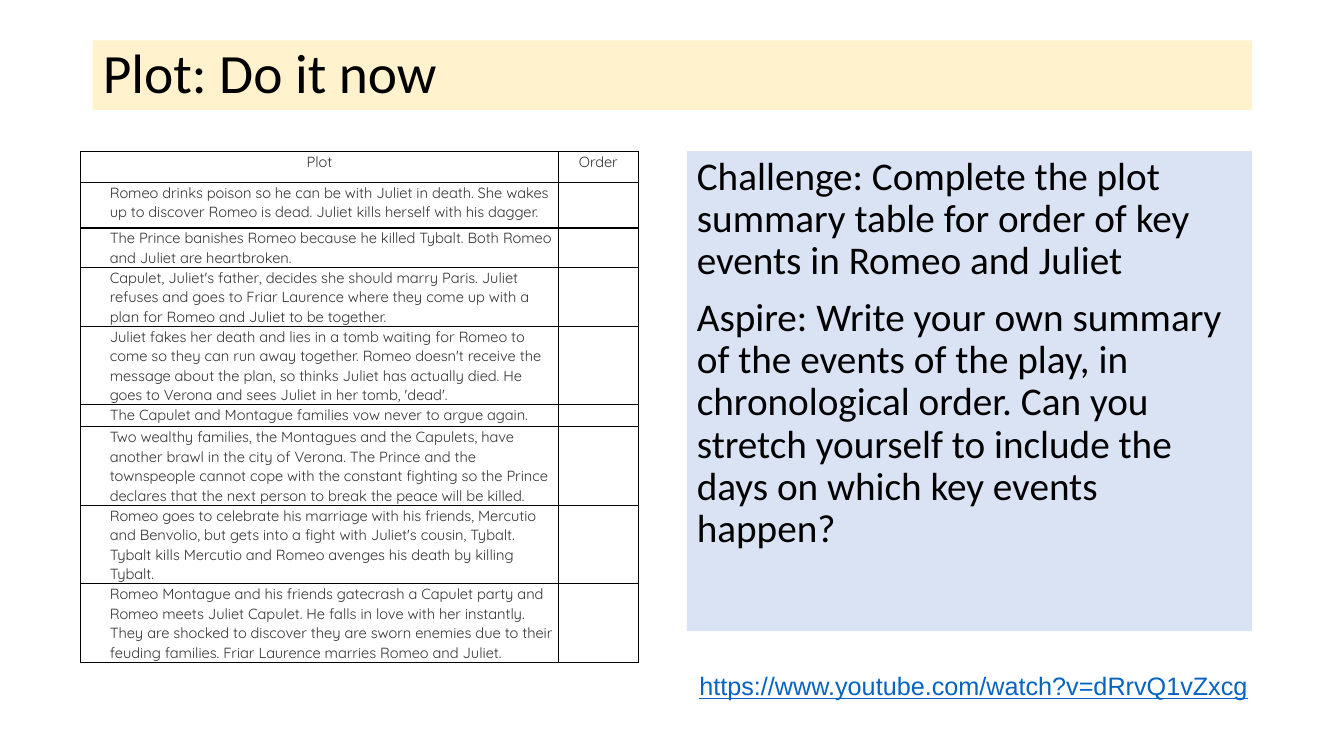
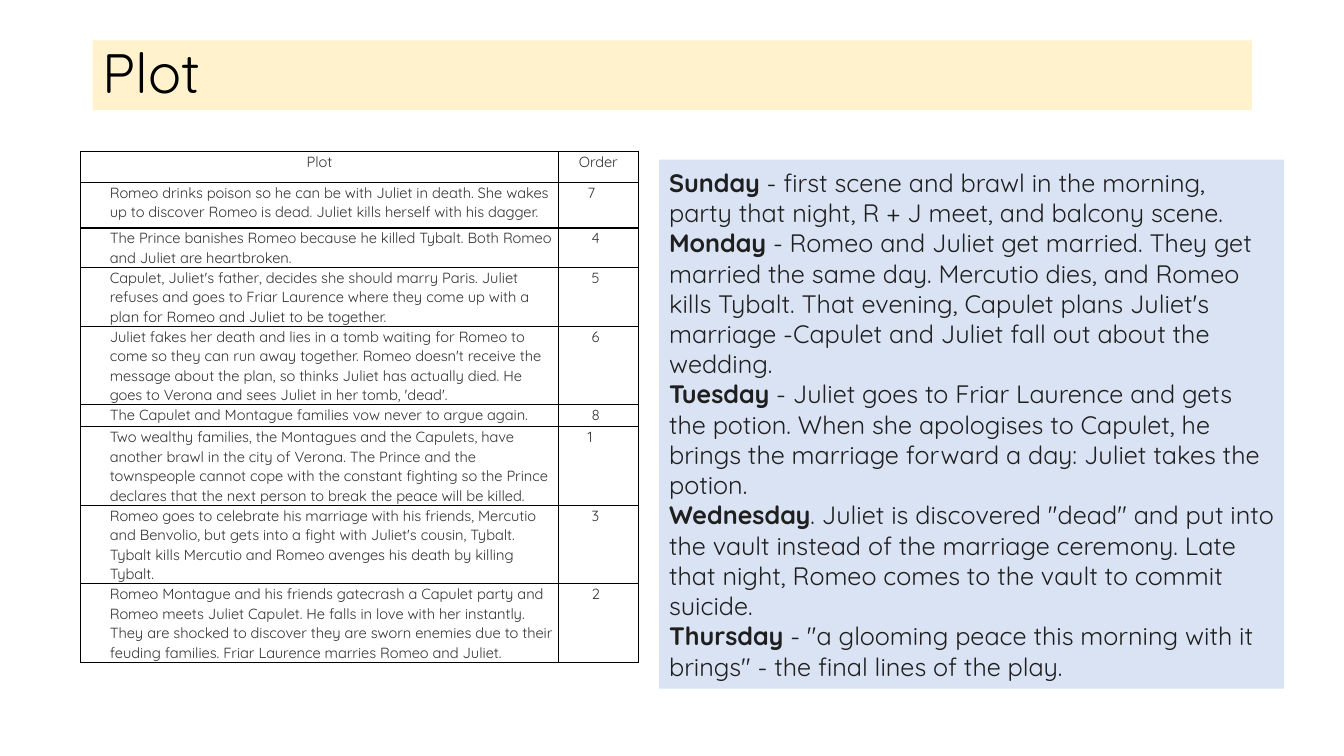
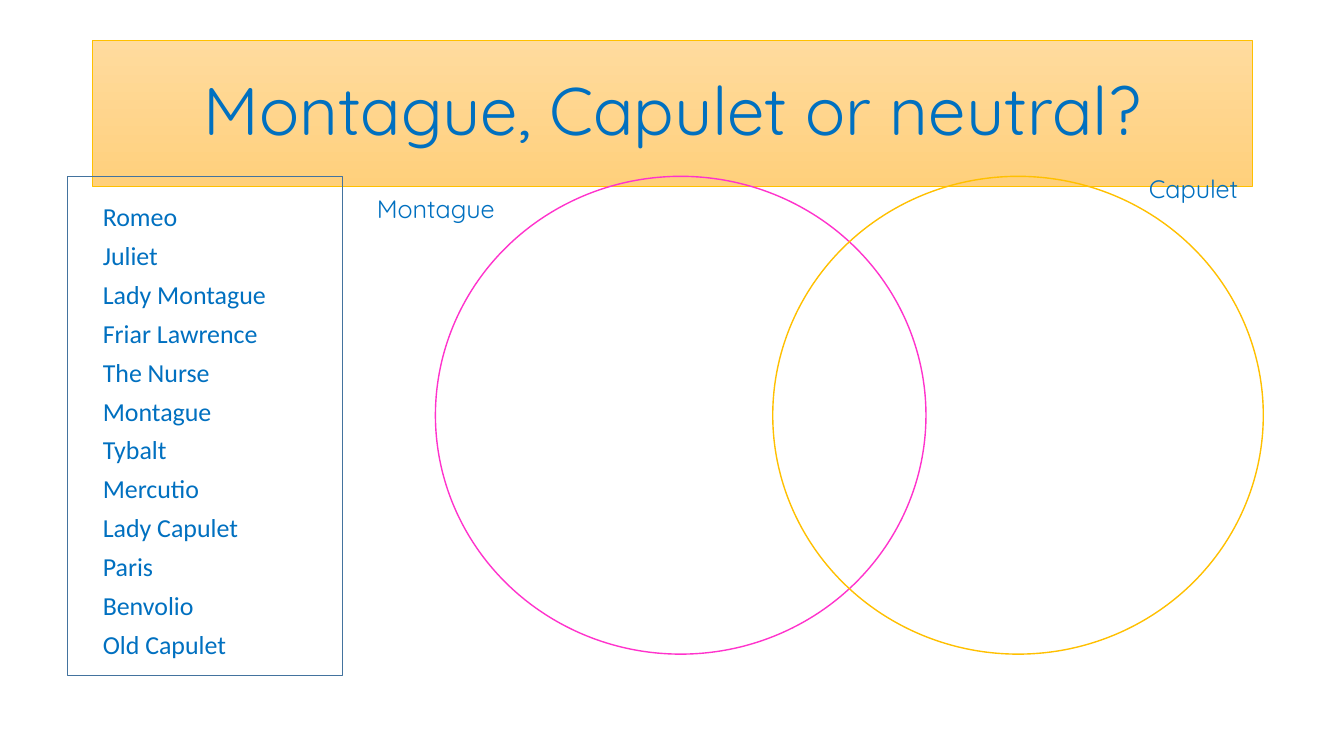
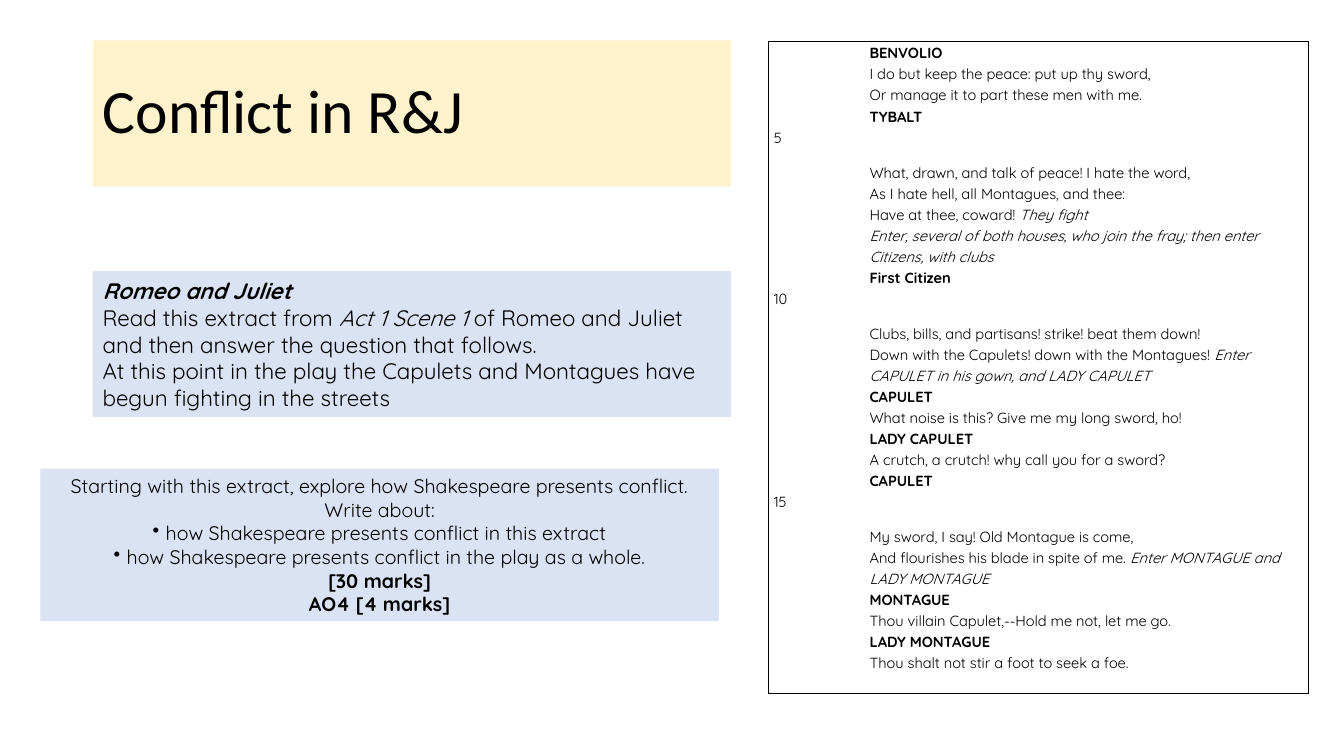
"""Build four lesson slides on the plot and conflict of Romeo and Juliet."""
from lxml import etree
from pptx import Presentation
from pptx.dml.color import RGBColor
from pptx.enum.shapes import MSO_SHAPE
from pptx.enum.text import MSO_ANCHOR, MSO_AUTO_SIZE, PP_ALIGN
from pptx.oxml.ns import qn
from pptx.util import Inches, Pt

LEFT, CENTER = PP_ALIGN.LEFT, PP_ALIGN.CENTER
TOP, MIDDLE = MSO_ANCHOR.TOP, MSO_ANCHOR.MIDDLE
NO_AUTOSIZE = MSO_AUTO_SIZE.NONE
RECTANGLE = MSO_SHAPE.RECTANGLE
PROCESS = MSO_SHAPE.FLOWCHART_PROCESS
CIRCLE = MSO_SHAPE.FLOWCHART_CONNECTOR

SLIDE_WIDTH, SLIDE_HEIGHT = Inches(13.33), Inches(7.5)
TITLE_AND_BODY, TITLE_ONLY = 1, 5
CREAM, PALE_BLUE, GOLD, PINK = "FFF2CC", "DAE3F3", "FFC000", "FF33CC"
PEACH, ORANGE = "FFDB9E", "FFD07C"
BLACK, INK, GREY, BLUE = "000000", "1F1F1F", "333333", "0070C0"
LINK_BLUE, STEEL = "0563C1", "43739E"
PLAIN_FONT, ROUND_FONT, LINK_FONT = "Calibri", "Quicksand", "Arial"

MARGIN, FULL, HALF = 6.9, 86.25, 47.5
TITLE_TOP, TITLE_SLIM, TITLE_TALL = 5.33, 9.2, 19.33
CONTENT_TOP, DIAGRAM_TOP, BODY_HEIGHT = 20, 23.33, 63.5
PLOT_COLUMNS = [35.55, 5.95]
PLOT_ROWS = [4.15, 6, 5.2, 7.8, 10.4, 2.9, 10.4, 10.4, 10.4]
SPEECH_INDENT = 0.95

EVENTS = [
    ("Romeo drinks poison so he can be with Juliet in death. She wakes up to discover Romeo is dead. "
     "Juliet kills herself with his dagger.", "7", 0.25),
    ("The Prince banishes Romeo because he killed Tybalt. Both Romeo and Juliet are heartbroken.", "4", 0.29),
    ("Capulet, Juliet's father, decides she should marry Paris. Juliet refuses and goes to Friar Laurence "
     "where they come up with a plan for Romeo and Juliet to be together.", "5", 0.29),
    ("Juliet fakes her death and lies in a tomb waiting for Romeo to come so they can run away together. "
     "Romeo doesn't receive the message about the plan, so thinks Juliet has actually died. "
     "He goes to Verona and sees Juliet in her tomb, 'dead'.", "6", 0.29),
    ("The Capulet and Montague families vow never to argue again.", "8", 0.29),
    ("Two wealthy families, the Montagues and the Capulets, have another brawl in the city of Verona. "
     "The Prince and the townspeople cannot cope with the constant fighting so the Prince declares "
     "that the next person to break the peace will be killed.", "1", 0.25),
    ("Romeo goes to celebrate his marriage with his friends, Mercutio and Benvolio, but gets into a fight "
     "with Juliet's cousin, Tybalt. Tybalt kills Mercutio and Romeo avenges his death by killing Tybalt.",
     "3", 0.29),
    ("Romeo Montague and his friends gatecrash a Capulet party and Romeo meets Juliet Capulet. "
     "He falls in love with her instantly. They are shocked to discover they are sworn enemies due to their "
     "feuding families. Friar Laurence marries Romeo and Juliet.", "2", 0.29),
]

TASKS = [
    "Challenge: Complete the plot summary table for order of key events in Romeo and Juliet",
    "Aspire: Write your own summary of the events of the play, in chronological order. "
    "Can you stretch yourself to include the days on which key events happen?",
]

DAYS = [
    ("Sunday", " - first scene and brawl in the morning, party that night, R + J meet, and balcony scene."),
    ("Monday", " - Romeo and Juliet get married. They get married the same day. Mercutio dies, and Romeo "
     "kills Tybalt. That evening, Capulet plans Juliet's marriage -Capulet and Juliet fall out about "
     "the wedding."),
    ("Tuesday", " - Juliet goes to Friar Laurence and gets the potion. When she apologises to Capulet, "
     "he brings the marriage forward a day: Juliet takes the potion."),
    ("Wednesday", ". Juliet is discovered \"dead\" and put into the vault instead of the marriage ceremony. "
     "Late that night, Romeo comes to the vault to commit suicide."),
    ("Thursday", " - \"a glooming peace this morning with it brings\" - the final lines of the play."),
]

CHARACTERS = ["Romeo", "Juliet", "Lady Montague", "Friar Lawrence", "The Nurse", "Montague", "Tybalt",
              "Mercutio", "Lady Capulet", "Paris", "Benvolio", "Old Capulet"]

INTRODUCTION = [
    [("Romeo and Juliet", "bi")],
    [("Read this extract from ", ""), ("Act 1 Scene 1 ", "i"),
     ("of Romeo and Juliet and then answer the question that follows.", "")],
    "At this point in the play the Capulets and Montagues have begun fighting in the streets",
]

EXTRACT = [
    [("BENVOLIO", "b")],
    "I do but keep the peace: put up thy sword,",
    "Or manage it to part these men with me.",
    [("TYBALT", "b")],
    "5",
    "What, drawn, and talk of peace! I hate the word,",
    "As I hate hell, all Montagues, and thee:",
    [("Have at thee, coward! ", ""), ("They fight", "i")],
    [("Enter, several of both houses, who join the fray; then enter Citizens, with clubs", "i")],
    [("First Citizen", "b")],
    "10",
    "Clubs, bills, and partisans! strike! beat them down!",
    [("Down with the Capulets! down with the Montagues! ", ""),
     ("Enter CAPULET in his gown, and LADY CAPULET", "i")],
    [("CAPULET", "b")],
    "What noise is this? Give me my long sword, ho!",
    [("LADY CAPULET", "b")],
    "A crutch, a crutch! why call you for a sword?",
    [("CAPULET", "b")],
    "15",
    "My sword, I say! Old Montague is come,",
    [("And flourishes his blade in spite of me. ", ""), ("Enter MONTAGUE and LADY MONTAGUE", "i")],
    [("MONTAGUE", "b")],
    "Thou villain Capulet,--Hold me not, let me go.",
    [("LADY MONTAGUE", "b")],
    "Thou shalt not stir a foot to seek a foe.",
]


def color(value):
    """Turn a hex string into a colour."""
    return RGBColor.from_string(value)


def across(share):
    """Return a percentage of the slide's width."""
    return round(SLIDE_WIDTH * share / 100)


def down(share):
    """Return a percentage of the slide's height."""
    return round(SLIDE_HEIGHT * share / 100)


def area(left, top, width, height):
    """Return a place on the slide from percentages of its size."""
    return across(left), down(top), across(width), down(height)


def move(shape, place):
    """Put a placeholder at a place."""
    shape.left, shape.top, shape.width, shape.height = place


def set_bullet(para, bullet, indent):
    """Give a paragraph its left indent and its bullet, if any."""
    properties = para._p.get_or_add_pPr()
    properties.set("marL", str(Inches(indent)))
    properties.set("indent", str(-Inches(indent) if bullet else 0))
    if bullet:
        etree.SubElement(properties, qn("a:buChar"), char=bullet)
    else:
        etree.SubElement(properties, qn("a:buNone"))


def write(para, content, size, font, ink, align=LEFT, spacing=1.0, before=0, after=0,
          indent=0, bullet="", underline=False):
    """Fill a paragraph from a string or from (text, style) spans."""
    set_bullet(para, bullet, indent)
    para.alignment, para.line_spacing = align, spacing
    para.space_before, para.space_after = Pt(before), Pt(after)
    if not content:
        etree.SubElement(para._p, qn("a:endParaRPr"), sz=str(round(size * 100)))
        return
    for text, style in [(content, "")] if isinstance(content, str) else content:
        span = para.add_run()
        span.text = text
        span.font.size, span.font.name = Pt(size), font
        span.font.color.rgb = color(ink)
        span.font.bold, span.font.italic = "b" in style, "i" in style
        span.font.underline = underline


def next_paragraph(frame, index):
    """Return the first paragraph of a frame, or a new one after it."""
    return frame.add_paragraph() if index else frame.paragraphs[0]


def write_all(frame, contents, size, font, ink, anchor=TOP, gap=0, **layout):
    """Fill a text frame with paragraphs set apart by a gap."""
    frame.word_wrap, frame.auto_size, frame.vertical_anchor = True, NO_AUTOSIZE, anchor
    for index, content in enumerate(contents):
        write(next_paragraph(frame, index), content, size, font, ink,
              before=gap if index else 0, **layout)


def paint(shape, fill):
    """Fill a shape with one colour."""
    shape.fill.solid()
    shape.fill.fore_color.rgb = color(fill)


def add_title(page, text, width=FULL, height=TITLE_SLIM, size=39.6, font=PLAIN_FONT, ink=BLACK, align=LEFT):
    """Set the title placeholder as a cream band."""
    title = page.shapes.title
    move(title, area(MARGIN, TITLE_TOP, width, height))
    paint(title, CREAM)
    write_all(title.text_frame, [text], size, font, ink, anchor=MIDDLE, align=align, spacing=0.9)
    return title


def add_body(page, place, contents, size, ink, spacing):
    """Set the body placeholder as a list without bullets."""
    body = page.placeholders[1]
    move(body, place)
    write_all(body.text_frame, contents, size, PLAIN_FONT, ink, gap=10, spacing=spacing)
    return body


def add_label(page, place, text, font=ROUND_FONT, ink=BLUE, underline=False):
    """Add a line of free text."""
    box = page.shapes.add_textbox(*place)
    write_all(box.text_frame, [text], 18, font, ink, underline=underline)


def add_panel(page, place):
    """Add a pale blue box and return it."""
    panel = page.shapes.add_shape(RECTANGLE, *place)
    panel.shadow.inherit = False
    paint(panel, PALE_BLUE)
    panel.line.fill.background()
    return panel


def add_outline(page, kind, place, ink):
    """Add an unfilled shape with a thin line."""
    shape = page.shapes.add_shape(kind, *place)
    shape.shadow.inherit = False
    shape.fill.background()
    shape.line.color.rgb, shape.line.width = color(ink), Pt(1)


def frame_cell(cell, inset):
    """Clear a cell's fill and draw its four black borders."""
    cell.margin_left = cell.margin_right = Inches(inset)
    cell.margin_top = cell.margin_bottom = 0
    cell.fill.background()
    properties = cell._tc.get_or_add_tcPr()
    for index, side in enumerate("LRTB"):
        line = etree.Element(qn(f"a:ln{side}"), w=str(Pt(1)))
        fill = etree.SubElement(line, qn("a:solidFill"))
        etree.SubElement(fill, qn("a:srgbClr"), val=BLACK)
        properties.insert(index, line)


def add_grid(page, left, top, columns, rows, inset):
    """Add a bordered table with given column and row shares."""
    place = area(left, top, sum(columns), sum(rows))
    table = page.shapes.add_table(len(rows), len(columns), *place).table
    table.first_row = table.horz_banding = False
    for column, share in zip(table.columns, columns):
        column.width = across(share)
    for row, share in zip(table.rows, rows):
        row.height = down(share)
    for cell in table.iter_cells():
        frame_cell(cell, inset)
    return table


def add_plot_table(page, answered):
    """Add the table of events, with or without their order."""
    table = add_grid(page, 6, CONTENT_TOP, PLOT_COLUMNS, PLOT_ROWS, 0.04)
    entries = [[("Plot", CENTER, 0), ("Order", CENTER, 0)]]
    for event, order, indent in EVENTS:
        entries.append([(event, LEFT, 0.25), (order if answered else "", LEFT, indent)])
    for row, line in enumerate(entries):
        for column, (text, align, indent) in enumerate(line):
            para = table.cell(row, column).text_frame.paragraphs[0]
            write(para, text, 10.5, ROUND_FONT, GREY, align=align, spacing=1.07, after=6, indent=indent)


def add_extract(page):
    """Add the framed extract with its line numbers at the margin."""
    table = add_grid(page, 57.2, 5.5, [40.15], [86.25], 0.05)
    frame = table.cell(0, 0).text_frame
    for index, content in enumerate(EXTRACT):
        numbered = isinstance(content, str) and content.isdigit()
        write(next_paragraph(frame, index), content, 10.5, ROUND_FONT, BLACK, spacing=1.15,
              after=10 if numbered else 0, indent=0 if numbered else SPEECH_INDENT)


def build_starter(page):
    """Build the opening task."""
    add_title(page, "Plot: Do it now")
    body = add_body(page, area(51.1, CONTENT_TOP, 42.05, BODY_HEIGHT), TASKS, 28, BLACK, 0.9)
    paint(body, PALE_BLUE)
    add_plot_table(page, answered=False)
    add_label(page, area(51.3, 88, 42.7, 9.5), "https://www.youtube.com/watch?v=dRrvQ1vZxcg",
              LINK_FONT, LINK_BLUE, underline=True)


def build_answers(page):
    """Build the answers with the days of the play."""
    add_title(page, "Plot", font=ROUND_FONT)
    add_plot_table(page, answered=True)
    panel = add_panel(page, area(49.05, 21.1, 46.5, 70))
    days = [[(day, "b"), (events, "")] for day, events in DAYS]
    write_all(panel.text_frame, days, 18, ROUND_FONT, INK, anchor=MIDDLE)


def build_families(page):
    """Build the diagram for sorting characters into families."""
    title = add_title(page, "Montague, Capulet or neutral?", height=TITLE_TALL, size=48,
                      font=ROUND_FONT, ink=BLUE, align=CENTER)
    title.fill.gradient()
    title.fill.gradient_angle = 270
    for stop, shade in zip(title.fill.gradient_stops, (PEACH, ORANGE)):
        stop.color.rgb = color(shade)
    title.line.color.rgb, title.line.width = color(GOLD), Pt(0.5)
    add_body(page, area(MARGIN, 26.67, FULL, BODY_HEIGHT), CHARACTERS, 18.5, BLUE, 0.8)
    for left, ink in ((32.4, PINK), (57.5, GOLD)):
        add_outline(page, CIRCLE, area(left, DIAGRAM_TOP, 36.5, 63.2), ink)
    add_outline(page, PROCESS, area(5, DIAGRAM_TOP, 20.5, 66), STEEL)
    add_label(page, area(27.3, 24.9, 12.25, 5.4), "Montague")
    add_label(page, area(84.75, 22.3, 10.7, 5.4), "Capulet")


def build_conflict(page):
    """Build the exam question with its extract."""
    add_title(page, "Conflict in R&J", HALF, TITLE_TALL, 44)
    add_extract(page)
    introduction = add_panel(page, area(MARGIN, 35.85, HALF, 19.35))
    write_all(introduction.text_frame, INTRODUCTION, 16, ROUND_FONT, BLACK, anchor=MIDDLE)
    question = add_panel(page, area(3, 62, 50.5, 20.15)).text_frame
    question.word_wrap, question.vertical_anchor = True, MIDDLE
    lines = [
        ("Starting with this extract, explore how Shakespeare presents conflict.", ""),
        ("Write about:", ""),
        ("how Shakespeare presents conflict in this extract", "•"),
        ("how Shakespeare presents conflict in the play as a whole.", "•"),
        ([("[30 marks]", "b")], ""),
        ([("AO4 [4 marks]", "b")], ""),
    ]
    for index, (content, bullet) in enumerate(lines):
        write(next_paragraph(question, index), content, 14, ROUND_FONT, BLACK, align=CENTER,
              bullet=bullet, indent=0.13 if bullet else 0)


def main():
    """Build and save the deck."""
    deck = Presentation()
    deck.slide_width, deck.slide_height = SLIDE_WIDTH, SLIDE_HEIGHT
    for layout, build in ((TITLE_AND_BODY, build_starter), (TITLE_ONLY, build_answers),
                          (TITLE_AND_BODY, build_families), (TITLE_ONLY, build_conflict)):
        build(deck.slides.add_slide(deck.slide_layouts[layout]))
    deck.save("out.pptx")


if __name__ == "__main__":
    main()
